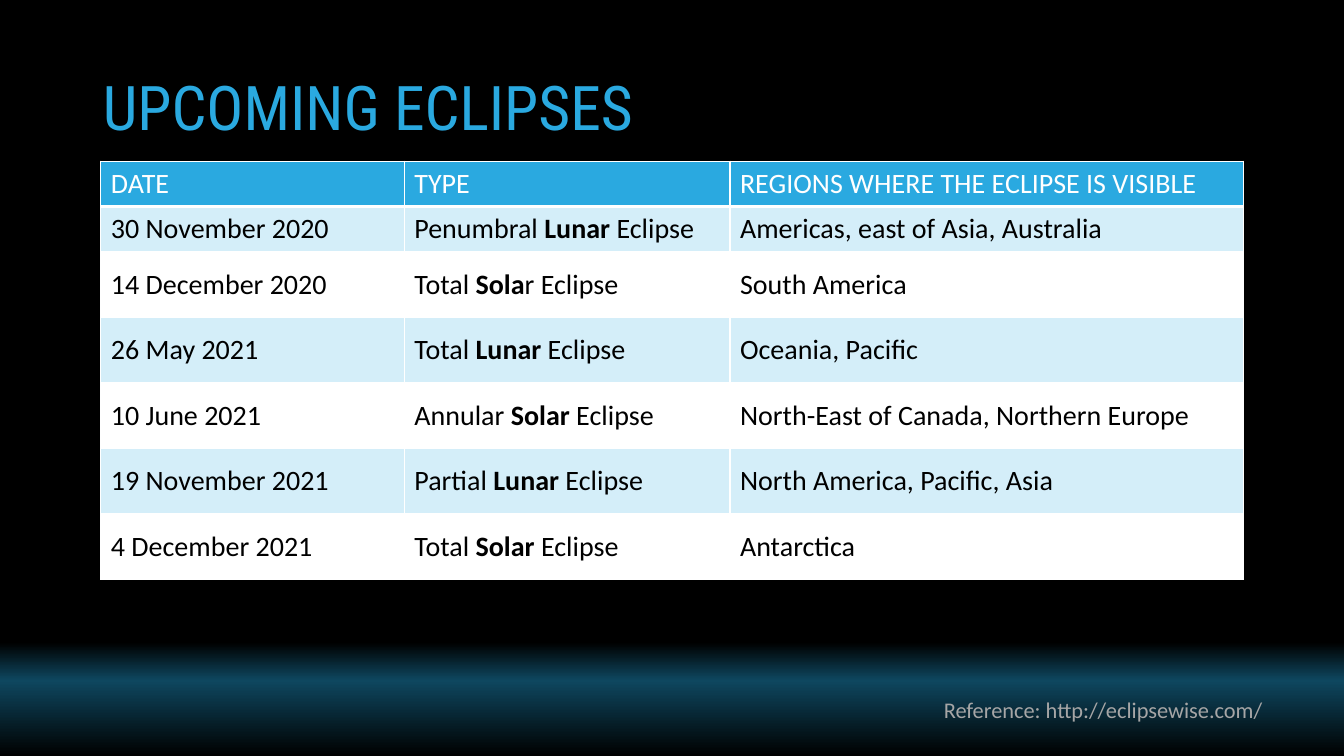
import copy
from dataclasses import dataclass

import pptx
import pptx.dml.color
import pptx.enum.text
import pptx.oxml
import pptx.oxml.ns
import pptx.util
from pptx.util import Inches

COLORS = {
    "accent": "2AA9E0",
    "band": "D4EEF9",
    "white": "FFFFFF",
    "black": "000000",
    "glow": "0E475F",
    "reference": "A6A6A6",
}
BACKGROUND_STOPS = [(0.85, "black"), (0.9, "glow"), (1.0, "black")]
COLUMN_WIDTHS = [3.01, 3.23, 5.09]
HEADINGS = ["DATE", "TYPE", "REGIONS WHERE THE ECLIPSE IS VISIBLE"]


@dataclass
class Eclipse:
    date: str
    extent: str
    bold_body: str
    ending: str
    regions: str
    height: float = 0.65


ECLIPSES = [
    Eclipse("30 November 2020", "Penumbral ", "Lunar", " Eclipse", "Americas, east of Asia, Australia", 0.45),
    Eclipse("14 December 2020", "Total ", "Sola", "r Eclipse", "South America"),
    Eclipse("26 May 2021", "Total ", "Lunar", " Eclipse", "Oceania, Pacific"),
    Eclipse("10 June 2021", "Annular ", "Solar", " Eclipse", "North-East of Canada, Northern Europe"),
    Eclipse("19 November 2021", "Partial ", "Lunar", " Eclipse", "North America, Pacific, Asia"),
    Eclipse("4 December 2021", "Total ", "Solar", " Eclipse", "Antarctica"),
]


def rgb(name: str) -> pptx.dml.color.RGBColor:
    return pptx.dml.color.RGBColor.from_string(COLORS[name])


def style(paragraph, size: int, color: str, face: str = "Calibri") -> None:
    paragraph.font.size = pptx.util.Pt(size)
    paragraph.font.name = face
    paragraph.font.color.rgb = rgb(color)


def paint_background(slide) -> None:
    fill = slide.background.fill
    fill.gradient()
    fill.gradient_angle = 270
    stop_list = slide.element.find(".//" + pptx.oxml.ns.qn("a:gsLst"))
    stop_list.append(copy.deepcopy(stop_list[0]))
    for stop, (position, color) in zip(fill.gradient_stops, BACKGROUND_STOPS):
        stop.position = position
        stop.color.rgb = rgb(color)


def add_border(cell, side: str, points: int) -> None:
    cell._tc.get_or_add_tcPr().append(pptx.oxml.parse_xml(
        f'<a:ln{side} {pptx.oxml.ns.nsdecls("a")} w="{pptx.util.Pt(points)}"><a:solidFill>'
        f'<a:srgbClr val="{COLORS["white"]}"/></a:solidFill></a:ln{side}>'
    ))


def fill_cell(cell, parts: list[str], fill: str, color: str, bottom: int = 1) -> None:
    for side, points in zip("LRTB", (1, 1, 1, bottom)):
        add_border(cell, side, points)
    cell.fill.solid()
    cell.fill.fore_color.rgb = rgb(fill)
    cell.vertical_anchor = pptx.enum.text.MSO_ANCHOR.MIDDLE
    paragraph = cell.text_frame.paragraphs[0]
    style(paragraph, 20, color)
    for index, part in enumerate(parts):
        run = paragraph.add_run()
        run.text = part
        run.font.bold = index == 1


def add_title(slide) -> None:
    title = slide.shapes.title
    title.left, title.top, title.width, title.height = map(Inches, (0.92, 0.37, 11.5, 1.45))
    title.text = "UPCOMING ECLIPSES"
    title.text_frame.auto_size = pptx.enum.text.MSO_AUTO_SIZE.NONE
    title.text_frame.vertical_anchor = pptx.enum.text.MSO_ANCHOR.MIDDLE
    heading = title.text_frame.paragraphs[0]
    heading.alignment = pptx.enum.text.PP_ALIGN.LEFT
    heading.line_spacing = 0.9
    style(heading, 44, "accent", "Roboto Condensed")


def add_reference(slide) -> None:
    reference = slide.shapes.add_textbox(*map(Inches, (3.18, 6.86, 9.44, 0.55))).text_frame
    reference.word_wrap = True
    reference.text = "Reference: http://eclipsewise.com/"
    reference.paragraphs[0].alignment = pptx.enum.text.PP_ALIGN.RIGHT
    style(reference.paragraphs[0], 16, "reference")


def add_eclipse_table(slide) -> None:
    heights = [0.45] + [eclipse.height for eclipse in ECLIPSES]
    table = slide.shapes.add_table(
        len(heights), len(HEADINGS), Inches(1), Inches(1.6),
        Inches(sum(COLUMN_WIDTHS)), Inches(sum(heights)),
    ).table
    for column, width in zip(table.columns, COLUMN_WIDTHS):
        column.width = Inches(width)
    for row, height in zip(table.rows, heights):
        row.height = Inches(height)
    for column, heading in enumerate(HEADINGS):
        fill_cell(table.cell(0, column), [heading], "accent", "white", 3)
    for row, eclipse in enumerate(ECLIPSES, 1):
        kind = [eclipse.extent, eclipse.bold_body, eclipse.ending]
        for column, parts in enumerate([[eclipse.date], kind, [eclipse.regions]]):
            fill_cell(table.cell(row, column), parts, "band" if row % 2 else "white", "black")


def main() -> None:
    presentation = pptx.Presentation()
    presentation.slide_width = Inches(13.33)
    presentation.slide_height = Inches(7.5)
    slide = presentation.slides.add_slide(presentation.slide_layouts[5])
    paint_background(slide)
    add_title(slide)
    add_reference(slide)
    add_eclipse_table(slide)
    presentation.save("out.pptx")


if __name__ == "__main__":
    main()
